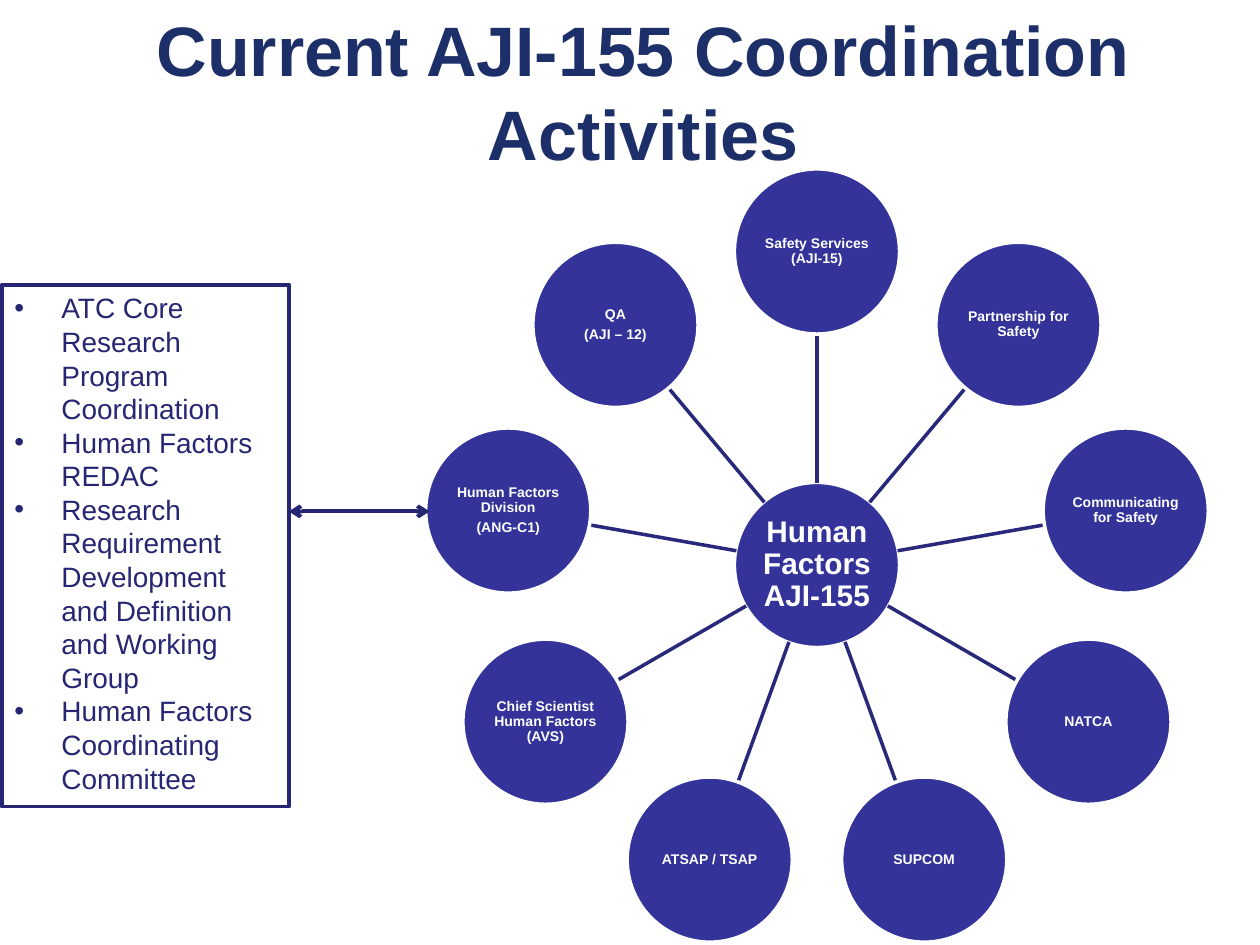
import math
from dataclasses import dataclass

import pptx
import pptx.dml.color
import pptx.enum.shapes
import pptx.enum.text
import pptx.oxml.ns
import pptx.util
from lxml import etree
from pptx.util import Cm, Pt

Align = pptx.enum.text.PP_ALIGN
Anchor = pptx.enum.text.MSO_ANCHOR
Fit = pptx.enum.text.MSO_AUTO_SIZE
Kind = pptx.enum.shapes.MSO_SHAPE
qn = pptx.oxml.ns.qn

NAVY, INK, DISC, SPOKE, WHITE = "1D2F68", "262673", "333399", "29297B", "FFFFFF"
HUB_X, HUB_Y = 16.47, 11.39
ORBIT, SIZE = 6.32, 3.33
INNER, OUTER = 1.65, 4.65


@dataclass
class Node:
    lines: list[str]
    size: float = 8


HUB = Node(["Human Factors AJI-155"], 17)
NODES = [
    Node(["Safety Services (AJI-15)"]),
    Node(["Partnership for Safety"]),
    Node(["Communicating for Safety"]),
    Node(["NATCA"]),
    Node(["SUPCOM"]),
    Node(["ATSAP / TSAP"]),
    Node(["Chief Scientist Human Factors (AVS)"]),
    Node(["Human Factors Division", "(ANG-C1)"]),
    Node(["QA", "(AJI – 12)"]),
]
TASKS = [
    "ATC Core Research Program Coordination",
    "Human Factors REDAC",
    "Research Requirement Development and Definition and Working Group",
    "Human Factors Coordinating Committee",
]


def color(code: str) -> pptx.dml.color.RGBColor:
    return pptx.dml.color.RGBColor.from_string(code)


def style(para, size: float, code: str, bold: bool = False) -> None:
    para.font.name = "Arial"
    para.font.size = Pt(size)
    para.font.bold = bold
    para.font.color.rgb = color(code)


def paint(shape, fill: str, line: str, width: float) -> None:
    shape.shadow.inherit = False
    shape.fill.solid()
    shape.fill.fore_color.rgb = color(fill)
    shape.line.color.rgb = color(line)
    shape.line.width = Pt(width)


def polar(angle: float, dist: float) -> tuple[float, float]:
    return HUB_X + dist * math.cos(angle), HUB_Y + dist * math.sin(angle)


def disc(slide, node: Node, x: float, y: float) -> None:
    shape = slide.shapes.add_shape(
        Kind.OVAL, Cm(x - SIZE / 2), Cm(y - SIZE / 2), Cm(SIZE), Cm(SIZE))
    paint(shape, DISC, WHITE, 2)
    frame = shape.text_frame
    frame.margin_left = frame.margin_right = Cm(0.03)
    frame.margin_top = frame.margin_bottom = Cm(0.03)
    frame.text = "\n".join(node.lines)
    for i, para in enumerate(frame.paragraphs):
        para.alignment = Align.CENTER
        para.line_spacing = 0.9
        if i:
            para.space_before = Pt(2.8)
        style(para, node.size, WHITE, True)


def link(slide, start: tuple[float, float], end: tuple[float, float],
         code: str, width: float, arrows: bool = False) -> None:
    line = slide.shapes.add_connector(
        pptx.enum.shapes.MSO_CONNECTOR.STRAIGHT, *map(Cm, start + end))
    line.line.color.rgb = color(code)
    line.line.width = Pt(width)
    if arrows:
        stroke = line.line.fill._xPr
        for tag in ("a:headEnd", "a:tailEnd"):
            etree.SubElement(stroke, qn(tag), type="arrow")
    etree.SubElement(line._element.spPr, qn("a:effectLst"))


def panel(slide, tasks: list[str]) -> None:
    shape = slide.shapes.add_shape(
        Kind.RECTANGLE, Cm(0.04), Cm(5.74), Cm(5.79), Cm(10.52))
    paint(shape, WHITE, INK, 2.25)
    frame = shape.text_frame
    frame.vertical_anchor = Anchor.TOP
    frame.auto_size = Fit.SHAPE_TO_FIT_TEXT
    frame.text = "\n".join(tasks)
    for para in frame.paragraphs:
        props = para._p.get_or_add_pPr()
        props.set("marL", str(Cm(0.95)))
        props.set("indent", str(-Cm(0.95)))
        etree.SubElement(props, qn("a:buFont"), typeface="Arial")
        etree.SubElement(props, qn("a:buChar"), char="•")
        para.alignment = Align.LEFT
        style(para, 16, INK)


deck = pptx.Presentation()
deck.slide_width, deck.slide_height = Cm(25.4), Cm(19.05)
slide = deck.slides.add_slide(deck.slide_layouts[5])

title = slide.shapes.title
title.left, title.top, title.width, title.height = map(Cm, (1.19, 0.97, 23.55, 1.7))
title.text_frame.text = "Current AJI-155 Coordination Activities"
title.text_frame.auto_size = Fit.NONE
title.text_frame.vertical_anchor = Anchor.MIDDLE
head = title.text_frame.paragraphs[0]
head.alignment = Align.CENTER
style(head, 40, NAVY, True)

disc(slide, HUB, HUB_X, HUB_Y)
for i, node in enumerate(NODES):
    angle = math.tau * i / len(NODES) - math.pi / 2
    link(slide, polar(angle, INNER), polar(angle, OUTER), SPOKE, 2)
    disc(slide, node, *polar(angle, ORBIT))

panel(slide, TASKS)
link(slide, (5.82, 10.31), (8.66, 10.31), INK, 2.25, True)

deck.save("out.pptx")
